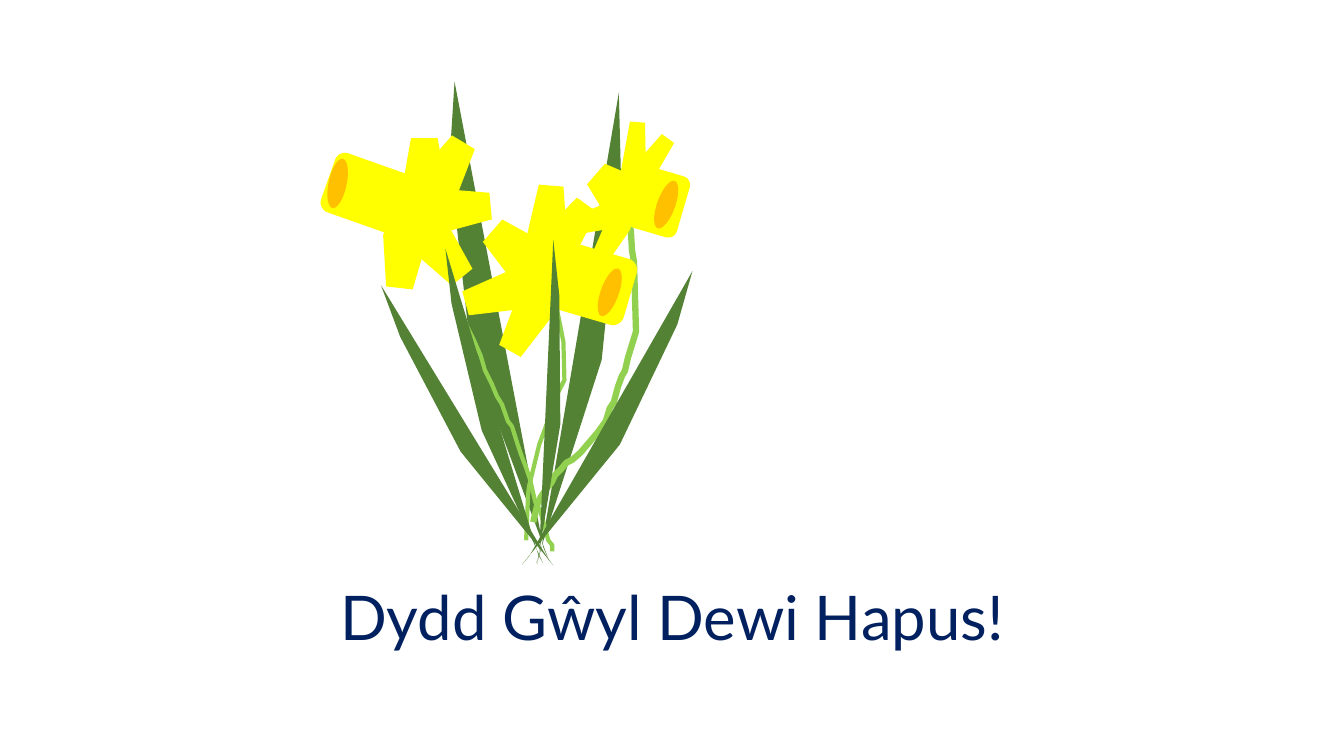
from pptx import Presentation
from pptx.dml.color import RGBColor
from pptx.enum.shapes import MSO_SHAPE
from pptx.enum.text import MSO_ANCHOR, MSO_AUTO_SIZE, PP_ALIGN
from pptx.util import Cm, Pt

PETAL = MSO_SHAPE.FLOWCHART_PREPARATION
TRUMPET = MSO_SHAPE.ROUNDED_RECTANGLE
OVAL = MSO_SHAPE.OVAL
MIDDLE = MSO_ANCHOR.MIDDLE
CENTER = PP_ALIGN.CENTER
NO_AUTOFIT = MSO_AUTO_SIZE.NONE

NAVY = RGBColor(0x00, 0x20, 0x60)
LEAF_GREEN = RGBColor(0x54, 0x82, 0x35)
STEM_GREEN = RGBColor(0x92, 0xD0, 0x50)
YELLOW = RGBColor(0xFF, 0xFF, 0x00)
ORANGE = RGBColor(0xFF, 0xC0, 0x00)

CM_PER_INCH = 2.54

BACK_LEAVES = [
    [(5.45, 5.57), (4.67, 3.48), (4.46, 1.6), (4.51, 0.81), (5.39, 5.43)],
    [(5.32, 5.59), (5.97, 3.57), (6.16, 1.71), (6.14, 0.92), (5.37, 5.45)],
]
FRONT_LEAVES = [
    [(5.39, 5.59), (4.78, 4.27), (4.48, 3.01), (4.42, 2.47), (5.34, 5.5)],
    [(5.49, 5.61), (4.57, 4.48), (3.97, 3.34), (3.78, 2.83), (5.43, 5.53)],
    [(5.33, 5.6), (5.56, 4.21), (5.55, 2.93), (5.49, 2.38), (5.35, 5.5)],
    [(5.18, 5.6), (6.15, 4.41), (6.72, 3.22), (6.87, 2.69), (5.25, 5.52)],
]

STEMS = [
    (3, [(4.04, 2.2), (4.09, 2.26), (4.3, 2.48), (4.47, 2.77), (4.52, 2.91),
         (4.58, 3.08), (4.63, 3.23), (4.7, 3.37), (4.77, 3.53), (4.81, 3.67),
         (4.88, 3.81), (4.93, 3.93), (4.98, 4.01), (5.04, 4.18), (5.08, 4.23),
         (5.13, 4.39), (5.17, 4.51), (5.22, 4.64), (5.26, 4.76), (5.31, 4.98),
         (5.36, 5.07), (5.4, 5.21), (5.44, 5.36), (5.48, 5.41), (5.48, 5.47)]),
    (4.5, [(5.29, 5.18), (5.33, 5.01), (5.36, 4.94), (5.42, 4.85), (5.47, 4.79),
           (5.51, 4.71), (5.57, 4.65), (5.62, 4.59), (5.68, 4.56), (5.76, 4.49),
           (5.93, 4.29), (6.01, 4.18), (6.05, 4.05), (6.09, 3.99), (6.13, 3.84),
           (6.17, 3.73), (6.2, 3.68), (6.23, 3.55), (6.31, 3.29), (6.29, 2.6),
           (6.27, 2.48), (6.26, 2.3), (6.23, 2.14), (6.22, 2.03)]),
    (3, [(5.22, 5.36), (5.24, 4.9), (5.25, 4.82), (5.35, 4.41), (5.38, 4.33),
         (5.46, 4.11), (5.52, 3.93), (5.6, 3.77), (5.59, 3.39), (5.54, 3.14),
         (5.5, 2.96), (5.46, 2.81), (5.43, 2.78)]),
]

FLOWERS = [
    ([(3.99, 1.37, 0.44, 1, 0), (4.12, 1.34, 0.44, 1, 31.1),
      (4.15, 1.59, 0.44, 1, 84.8), (4.05, 1.86, 0.44, 1, 141),
      (3.8, 1.86, 0.44, 1, 6.6)],
     (3.23, 1.62, 0.9, 0.62, 19.5), (3.26, 1.57, 0.18, 0.5, 11.8)),
    ([(5.3, 1.93, 0.41, 1.09, 35.8), (5.22, 1.84, 0.41, 1.09, 4.6),
      (4.99, 2.13, 0.49, 0.92, 310.9), (4.94, 2.32, 0.41, 1.09, 254.7),
      (5.12, 2.46, 0.41, 1.09, 29.1)],
     (5.44, 2.47, 0.83, 0.68, 16.3), (5.96, 2.65, 0.18, 0.5, 19.7)),
    ([(6.21, 1.28, 0.25, 1, 35.8), (6.16, 1.21, 0.25, 1, 4.6),
      (5.9, 1.63, 0.45, 0.56, 310.9), (5.89, 1.65, 0.25, 1, 254.7),
      (6.01, 1.73, 0.25, 1, 29.1)],
     (6.28, 1.69, 0.51, 0.63, 16.3), (6.52, 1.78, 0.18, 0.5, 19.8)),
]


def length(inches):
    return Cm(inches * CM_PER_INCH)


def paint(s, colour):
    s.shadow.inherit = False
    s.fill.solid()
    s.fill.fore_color.rgb = colour
    s.line.fill.background()


def add_outline(slide, points, close):
    start, *rest = [(length(x), length(y)) for x, y in points]
    builder = slide.shapes.build_freeform(*start, scale=1.0)
    builder.add_line_segments(rest, close=close)
    return builder.convert_to_shape()


def add_leaf(slide, points):
    paint(add_outline(slide, points, True), LEAF_GREEN)


def add_stem(slide, width, points):
    s = add_outline(slide, points, False)
    s.shadow.inherit = False
    s.fill.background()
    s.line.color.rgb = STEM_GREEN
    s.line.width = Pt(width)


def add_part(slide, kind, place, colour):
    *box, angle = place
    s = slide.shapes.add_shape(kind, *map(length, box))
    s.rotation = angle
    paint(s, colour)


def add_flower(slide, petals, trumpet):
    for petal in petals:
        add_part(slide, PETAL, petal, YELLOW)
    add_part(slide, TRUMPET, trumpet, YELLOW)


def set_title(slide, text):
    sp = slide.shapes.title
    sp.left, sp.top, sp.width, sp.height = map(length, (0.92, 5.43, 11.5, 1.45))
    tf = sp.text_frame
    tf.text = text
    tf.word_wrap = True
    tf.auto_size = NO_AUTOFIT
    tf.vertical_anchor = MIDDLE
    p = tf.paragraphs[0]
    p.alignment = CENTER
    p.line_spacing = 0.9
    r = p.runs[0]
    r.font.name = "Lato"
    r.font.size = Pt(44)
    r.font.color.rgb = NAVY


def main():
    prs = Presentation()
    prs.slide_width, prs.slide_height = Cm(33.87), Cm(19.05)
    slide = prs.slides.add_slide(prs.slide_layouts[5])
    set_title(slide, "Dydd Gŵyl Dewi Hapus!")
    for points in BACK_LEAVES:
        add_leaf(slide, points)
    for width, points in STEMS:
        add_stem(slide, width, points)
    for petals, trumpet, _ in FLOWERS:
        add_flower(slide, petals, trumpet)
    for _, _, mouth in FLOWERS:
        add_part(slide, OVAL, mouth, ORANGE)
    for points in FRONT_LEAVES:
        add_leaf(slide, points)
    prs.save("out.pptx")


if __name__ == "__main__":
    main()
